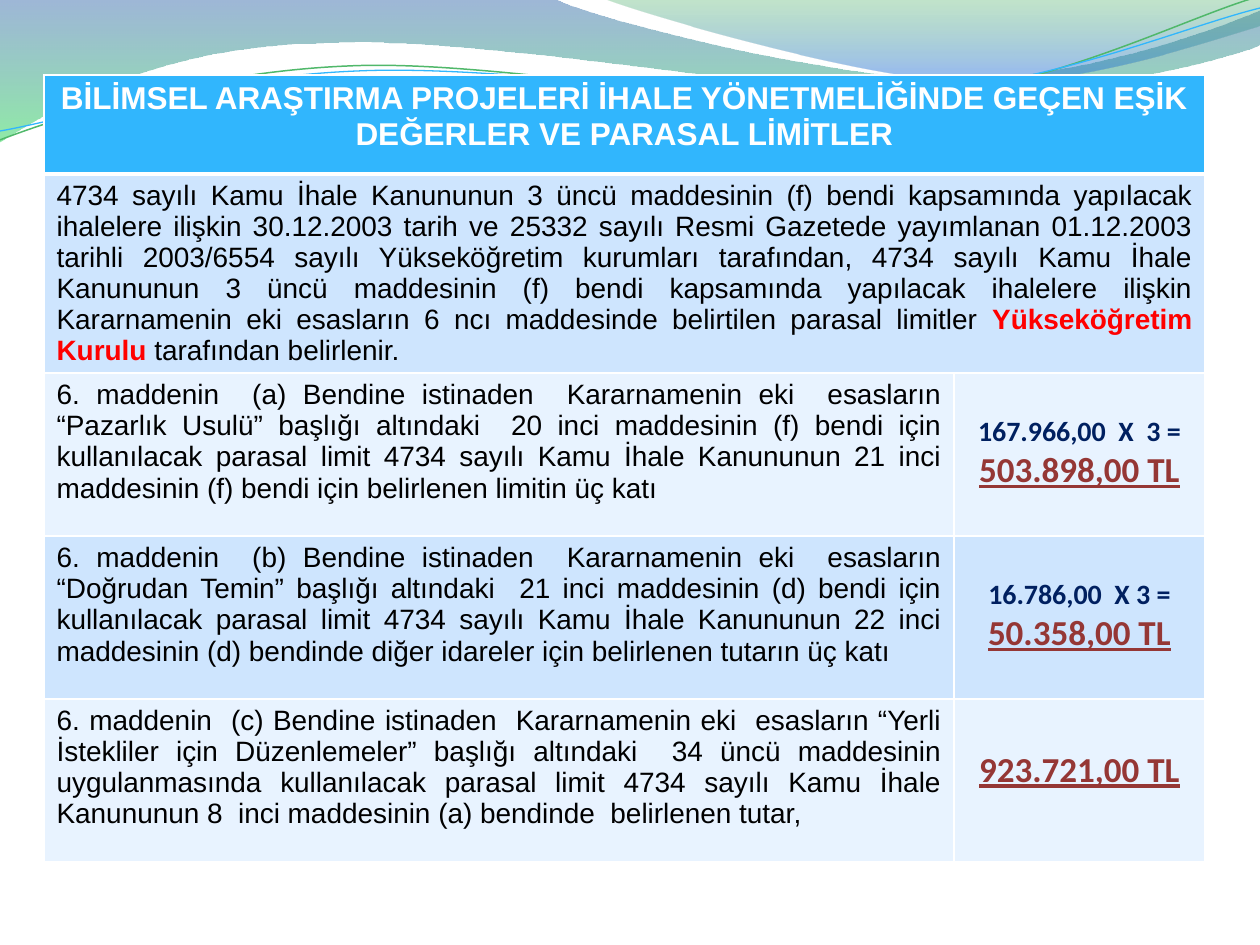
from math import cos, radians, sin

from lxml.etree import SubElement
from pptx import Presentation
from pptx.dml.color import RGBColor
from pptx.enum.text import PP_ALIGN
from pptx.oxml.ns import qn
from pptx.util import Pt

SCALE = 914400 / 126  # EMU per px
TILT = -2.7  # degrees, for the two thin lines
COLORS = {
    "white": "FFFFFF", "black": "000000", "red": "FF0000", "navy": "002060",
    "wine": "953735", "sky": "31B6FD", "pale": "CEE5FE", "mist": "E8F3FF",
    "blue": "2960A7", "green": "35DA5E", "leaf": "36A752", "azure": "2472D3",
    "lime": "50B86A",
}

# Routes: a start point, then lines (x, y) and Bezier curves (three points)
WAVES = [
    ([(0, 0), (554, -1), (600, 21, 837, 79, 955, 79),
      (1075, 79, 1207, 33, 1260, 11), (1261, 45),
      (1239, 55, 1096, 96, 940, 95), (784, 95, 481, 35, 324, 43),
      (163, 45, 58, 105, -1, 142), (0, 0)],
     [(0, "blue", 45), (1, "green", 55)]),
    ([(604, -1), (641, 14, 859, 78, 969, 82),
      (1079, 87, 1211, 40, 1260, 26), (1260, 0), (604, -1)],
     [(0, "leaf", 30), (0.8, "azure", 45)]),
]
# Route, centre of the tilt, colour, width
LINES = [
    ([(0, 140), (60, 117, 199, 72, 349, 66), (498, 59, 747, 112, 898, 101),
      (1050, 89, 1182, 19, 1257, -3)], (629, 72), "lime", 0.85),
    ([(0, 131), (59, 121, 207, 77, 357, 71), (508, 64, 752, 106, 903, 95),
      (1053, 84, 1186, 26, 1260, 8)], (629, 74), "sky", 0.75),
]

HEAD = "BİLİMSEL ARAŞTIRMA PROJELERİ İHALE YÖNETMELİĞİNDE GEÇEN EŞİK DEĞERLER VE PARASAL LİMİTLER"
INTRO = [
    ("4734 sayılı Kamu İhale Kanununun 3 üncü maddesinin (f) bendi kapsamında yapılacak "
     "ihalelere ilişkin 30.12.2003 tarih ve 25332 sayılı Resmi Gazetede yayımlanan 01.12.2003 "
     "tarihli 2003/6554 sayılı Yükseköğretim kurumları tarafından, 4734 sayılı Kamu İhale "
     "Kanununun 3 üncü maddesinin (f) bendi kapsamında yapılacak ihalelere ilişkin "
     "Kararnamenin eki esasların 6 ncı maddesinde belirtilen parasal limitler ", "black", False),
    ("Yükseköğretim Kurulu", "red", True),
    (" tarafından belirlenir.", "black", False),
]
# Clause, sum, limit, space above the limit in px
LIMITS = [
    ("6. maddenin  (a) Bendine istinaden  Kararnamenin eki  esasların “Pazarlık Usulü” başlığı "
     "altındaki  20 inci maddesinin (f) bendi için kullanılacak parasal limit 4734 sayılı Kamu "
     "İhale Kanununun 21 inci maddesinin (f) bendi için belirlenen limitin üç katı",
     "167.966,00  X  3 = ", "503.898,00 TL", 42),
    ("6. maddenin  (b) Bendine istinaden  Kararnamenin eki  esasların “Doğrudan Temin” başlığı "
     "altındaki  21 inci maddesinin (d) bendi için kullanılacak parasal limit 4734 sayılı Kamu "
     "İhale Kanununun 22 inci maddesinin (d) bendinde diğer idareler için belirlenen tutarın üç katı",
     "16.786,00  X 3 = ", "50.358,00 TL", 42),
    ("6. maddenin  (c) Bendine istinaden  Kararnamenin eki  esasların “Yerli İstekliler için "
     "Düzenlemeler” başlığı altındaki  34 üncü maddesinin uygulanmasında kullanılacak parasal "
     "limit 4734 sayılı Kamu İhale Kanununun 8  inci maddesinin (a) bendinde  belirlenen tutar,",
     "", "923.721,00 TL", 50),
]


def px(n):
    return round(n * SCALE)


def rgb(name):
    return RGBColor.from_string(COLORS[name])


def turn(point, centre, angle):
    """Rotate a point around a centre."""
    x, y = point[0] - centre[0], point[1] - centre[1]
    c, s = cos(radians(angle)), sin(radians(angle))
    return centre[0] + x * c - y * s, centre[1] + x * s + y * c


def add_form(slide, route, close=False, centre=(0, 0), tilt=0):
    """Lay out all points as lines, then join triples into curves."""
    points = [part[i:i + 2] for part in route for i in range(0, len(part), 2)]
    points = [tuple(px(n) for n in turn(p, centre, -tilt)) for p in points]
    pen = slide.shapes.build_freeform(*points[0], scale=1.0)
    pen.add_line_segments(points[1:], close=close)
    form = pen.convert_to_shape()
    form.shadow.inherit = False
    form.rotation = tilt
    legs = iter(list(form._element.iter(qn("a:lnTo"))))
    for part in route[1:]:
        first = next(legs)
        if len(part) == 6:
            curve = first.makeelement(qn("a:cubicBezTo"))
            first.addprevious(curve)
            for leg in (first, next(legs), next(legs)):
                curve.append(leg[0])
                leg.getparent().remove(leg)
    return form


def add_wave(slide, route, stops):
    form = add_form(slide, route, close=True)
    form.line.fill.background()
    form.fill.gradient()
    form.fill.gradient_angle = 270  # top to bottom
    for stop, (place, name, _) in zip(form.fill.gradient_stops, stops):
        stop.position = place
        stop.color.rgb = rgb(name)
    tints = list(form._element.spPr.iter(qn("a:srgbClr")))
    for tint, (_, _, alpha) in zip(tints, stops):
        SubElement(tint, qn("a:alpha"), val=str(alpha * 1000))


def add_line(slide, route, centre, name, width):
    form = add_form(slide, route, centre=centre, tilt=TILT)
    form.fill.background()
    form.line.color.rgb = rgb(name)
    form.line.width = Pt(width)


def paint(cell, name, base=1):
    """Set white borders, then the fill."""
    props = cell._tc.get_or_add_tcPr()
    for side, width in (("L", 1), ("R", 1), ("T", 1), ("B", base)):
        edge = SubElement(props, qn("a:ln" + side), w=str(Pt(width)))
        fill = SubElement(edge, qn("a:solidFill"))
        SubElement(fill, qn("a:srgbClr"), val=COLORS["white"])
    cell.fill.solid()
    cell.fill.fore_color.rgb = rgb(name)


def write(cell, align, runs):
    """Each run is text, colour, bold, size, font, underline."""
    para = cell.text_frame.paragraphs[0]
    para.alignment = align
    for text, name, bold, size, face, under in runs:
        run = para.add_run()
        run.text = text
        font = run.font
        font.name, font.size, font.bold = face, Pt(size), bold
        font.underline = under
        font.color.rgb = rgb(name)


def add_grid(slide):
    frame = slide.shapes.add_table(5, 2, px(44), px(75), px(1161), px(801))
    table = frame.table
    for col, width in zip(table.columns, (910, 251)):
        col.width = px(width)
    for row, height in zip(table.rows, (99, 163, 163, 163, 163)):
        row.height = px(height)
    frame.height = px(801)
    for i, shade in enumerate(("sky", "pale", "mist", "pale", "mist")):
        for j in (0, 1):
            paint(table.cell(i, j), shade, 1 if i else 3)

    # Heading and introduction span both columns
    for i in (0, 1):
        table.cell(i, 0).merge(table.cell(i, 1))
    write(table.cell(0, 0), PP_ALIGN.CENTER, [(HEAD, "white", True, 18, "Arial", False)])
    write(table.cell(1, 0), PP_ALIGN.JUSTIFY,
          [run + (16, "Arial", False) for run in INTRO])

    # Clauses with their limits
    for i, (clause, total, limit, space) in enumerate(LIMITS, 2):
        write(table.cell(i, 0), PP_ALIGN.JUSTIFY,
              [(clause, "black", False, 16, "Arial", False)])
        cell = table.cell(i, 1)
        cell.margin_top = px(space)
        runs = [(limit, "wine", True, 20, "Calibri", True)]
        if total:
            runs.insert(0, (total, "navy", True, 16, "Calibri", False))
        write(cell, PP_ALIGN.CENTER, runs)


def main():
    deck = Presentation()
    deck.slide_width, deck.slide_height = px(1260), px(945)
    slide = deck.slides.add_slide(deck.slide_layouts[6])
    for wave in WAVES:
        add_wave(slide, *wave)
    for line in LINES:
        add_line(slide, *line)
    add_grid(slide)
    deck.save("out.pptx")


if __name__ == "__main__":
    main()
